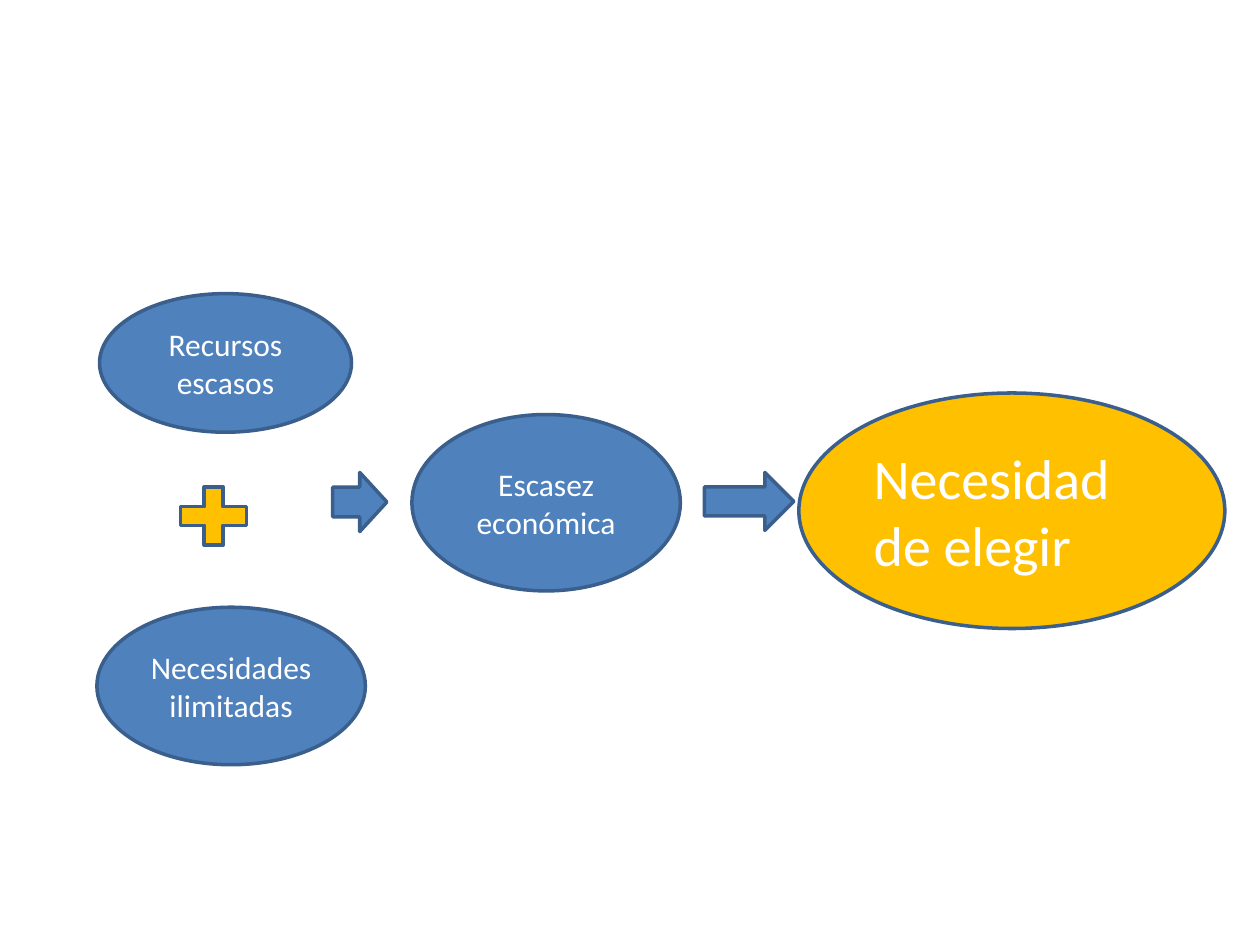
from pptx import Presentation
from pptx.dml.color import RGBColor
from pptx.enum import shapes as sh, text as tx
from pptx.util import Pt

BLUE = RGBColor(0x4F, 0x81, 0xBD)
GOLD = RGBColor(0xFF, 0xC0, 0x00)
OUTLINE = RGBColor(0x3A, 0x5F, 0x8C)
WHITE = RGBColor(0xFF, 0xFF, 0xFF)

deck = Presentation()
deck.slide_width, deck.slide_height = Pt(720), Pt(540)
slide = deck.slides.add_slide(deck.slide_layouts[6])


def add_part(kind, box, fill):
    part = slide.shapes.add_shape(kind, *map(Pt, box))
    part.shadow.inherit = False
    part.fill.solid()
    part.fill.fore_color.rgb = fill
    part.line.color.rgb = OUTLINE
    part.line.width = Pt(2)
    return part


# Concepts: causes, scarcity and the resulting choice
center, left = tx.PP_ALIGN.CENTER, tx.PP_ALIGN.LEFT
concepts = [
    ("Recursos escasos", (56.9, 167.8, 144, 79.2), BLUE, 18, center),
    ("Necesidad de elegir", (456.5, 224.6, 243.4, 134.6), GOLD, 32, left),
    ("Necesidades ilimitadas", (55.4, 347, 153.4, 90), BLUE, 18, center),
    ("Escasez económica", (235.4, 236.9, 153.4, 100.8), BLUE, 18, center),
]
for wording, box, fill, size, align in concepts:
    concept = add_part(sh.MSO_SHAPE.OVAL, box, fill)
    frame = concept.text_frame
    frame.word_wrap = True
    frame.vertical_anchor = tx.MSO_ANCHOR.MIDDLE
    label = frame.paragraphs[0]
    label.alignment = align
    run = label.add_run()
    run.text = wording
    for name, value in {"name": "Calibri", "size": Pt(size)}.items():
        setattr(run.font, name, value)
    run.font.color.rgb = WHITE

# Arrows from causes to scarcity, and from scarcity to choice
for box in [(190.1, 270, 31, 33.8), (402.5, 270, 51.1, 33.1)]:
    add_part(sh.MSO_SHAPE.RIGHT_ARROW, box, BLUE)

# Plus sign joining the two causes
add_part(sh.MSO_SHAPE.MATH_PLUS, (96.5, 272.2, 51.1, 45.4), GOLD)

deck.save("out.pptx")
